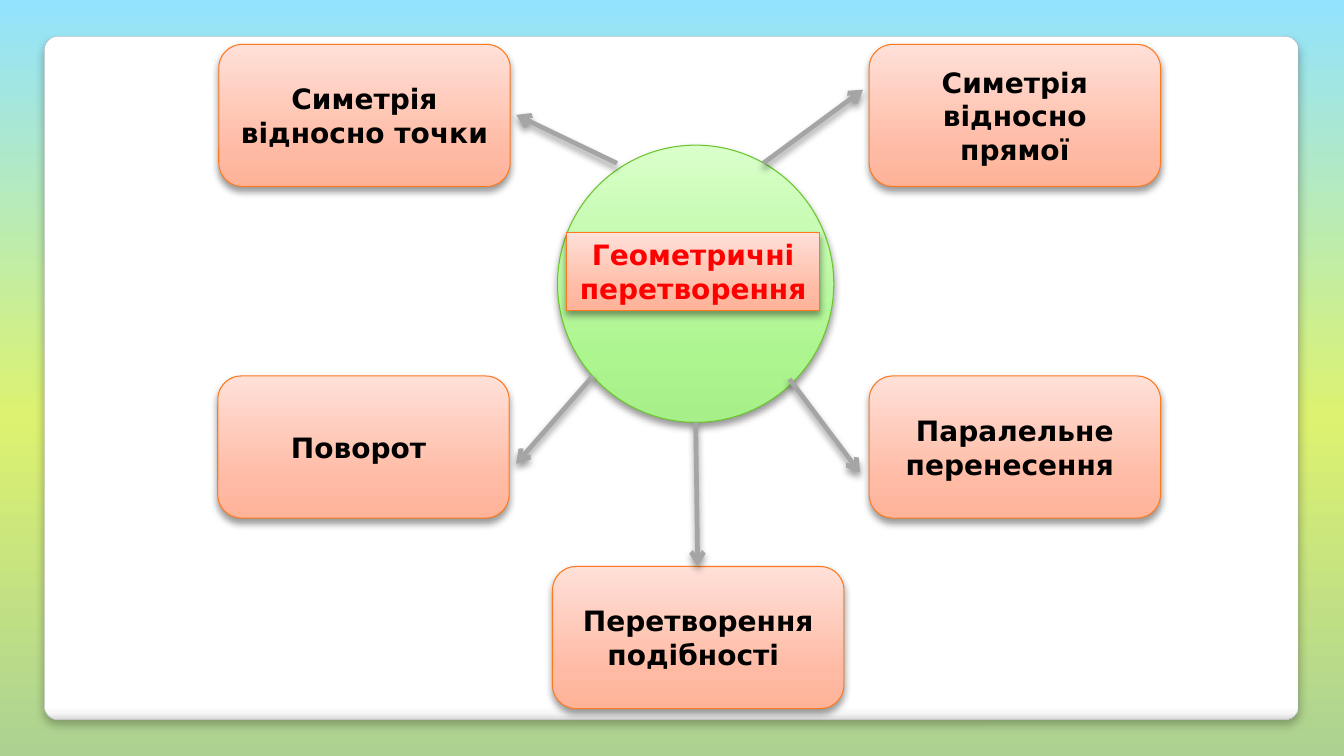
from dataclasses import dataclass

from lxml.etree import SubElement
from pptx import Presentation
from pptx.dml.color import RGBColor
from pptx.enum.shapes import MSO_CONNECTOR as Connector, MSO_SHAPE as Shape
from pptx.enum.text import MSO_ANCHOR as Anchor, MSO_AUTO_SIZE as AutoSize, PP_ALIGN as Align
from pptx.oxml.ns import qn
from pptx.util import Inches, Pt


@dataclass(frozen=True)
class Theme:
    font: str = "DejaVu Sans"
    text_size: float = 20
    text: str = "000000"
    title: str = "FF0000"
    sky: tuple = ((0, "ACD292"), (45, "DCF270"), (100, "93E3FF"))
    panel: tuple = ((0, "FFFFFF"), (98, "FFFFFF"), (99, "F7F7F7"), (100, "DADADA"))
    peach: tuple = ((0, "FFB399"), (25, "FFBAA3"), (100, "FFE0D8"))
    green: tuple = ((0, "A7EF88"), (25, "ADF58F"), (100, "D9FFCA"))
    panel_line: str = "A4A4A4"
    peach_line: str = "FF7A1F"
    green_line: str = "6BC62E"
    arrow: str = "A5A5A5"
    shadow: str = "000000"
    outline: float = 0.75
    panel_outline: float = 0.16
    arrow_width: float = 3.35


THEME = Theme()

BLOCK_SIZE = (2.89, 1.41)
BLOCKS = (
    (2.17, 0.44, "Симетрія відносно точки"),
    (8.62, 0.44, "Симетрія відносно прямої"),
    (2.16, 3.73, "Поворот "),
    (8.62, 3.73, "Паралельне перенесення "),
    (5.48, 5.62, "Перетворення подібності "),
)
ARROWS = (
    (6.12, 1.62, 5.12, 1.14),
    (7.57, 1.62, 8.56, 0.89),
    (5.88, 3.73, 5.12, 4.6),
    (7.83, 3.76, 8.53, 4.69),
    (6.9, 4.19, 6.92, 5.62),
)


def paint_gradient(fill, owner, stops, upward=True):
    """Fill with any number of stops, running straight up or straight down."""
    fill.gradient()
    fill.gradient_angle = 90 if upward else 270
    stop_list = next(owner.iter(qn("a:gsLst")))
    for old_stop in list(stop_list):
        stop_list.remove(old_stop)
    for percent, color in stops:
        stop = SubElement(stop_list, qn("a:gs"), pos=str(percent * 1000))
        SubElement(stop, qn("a:srgbClr"), val=color)


def cast_shadow(properties, opacity=40, blur=5.2, distance=3):
    """Put a downward shadow into an effect list placed after the line."""
    effects = properties.find(qn("a:effectLst"))
    if effects is None:
        effects = SubElement(properties, qn("a:effectLst"))
    shadow = SubElement(effects, qn("a:outerShdw"), blurRad=str(Pt(blur)),
                        dist=str(Pt(distance)), dir="5400000", rotWithShape="0")
    color = SubElement(shadow, qn("a:srgbClr"), val=THEME.shadow)
    SubElement(color, qn("a:alpha"), val=str(opacity * 1000))


def set_line(line, color, width):
    line.color.rgb = RGBColor.from_string(color)
    line.width = Pt(width)


def add_figure(page, kind, place, stops, line_color, width=THEME.outline, upward=True):
    figure = page.shapes.add_shape(kind, *map(Inches, place))
    paint_gradient(figure.fill, figure.element, stops, upward)
    set_line(figure.line, line_color, width)
    figure.shadow.inherit = False
    return figure


def add_panel(page):
    panel = add_figure(page, Shape.ROUNDED_RECTANGLE, (0.44, 0.36, 12.44, 6.78),
                       THEME.panel, THEME.panel_line, THEME.panel_outline, upward=False)
    panel.adjustments[0] = 0.02
    cast_shadow(panel.element.spPr, opacity=25, blur=6, distance=4)


def add_label(page, kind, place, text, color, anchor=Anchor.MIDDLE):
    box = add_figure(page, kind, place, THEME.peach, THEME.peach_line)
    cast_shadow(box.element.spPr)
    frame = box.text_frame
    frame.word_wrap = True
    frame.vertical_anchor = anchor
    para = frame.paragraphs[0]
    para.alignment = Align.CENTER
    span = para.add_run()
    span.text = text
    span.font.name = THEME.font
    span.font.size = Pt(THEME.text_size)
    span.font.bold = True
    span.font.color.rgb = RGBColor.from_string(color)
    return box


def add_arrow(page, ends):
    arrow = page.shapes.add_connector(Connector.STRAIGHT, *map(Inches, ends))
    set_line(arrow.line, THEME.arrow, THEME.arrow_width)
    properties = arrow.element.spPr
    SubElement(properties.find(qn("a:ln")), qn("a:tailEnd"), type="arrow")
    cast_shadow(properties)


def main():
    deck = Presentation()
    deck.slide_width, deck.slide_height = Inches(13.33), Inches(7.5)
    page = deck.slides.add_slide(deck.slide_layouts[6])
    paint_gradient(page.background.fill, page.element, THEME.sky)

    add_panel(page)
    for left, top, text in BLOCKS:
        add_label(page, Shape.ROUNDED_RECTANGLE, (left, top, *BLOCK_SIZE), text, THEME.text)

    circle = add_figure(page, Shape.OVAL, (5.53, 1.44, 2.74, 2.75),
                        THEME.green, THEME.green_line)
    cast_shadow(circle.element.spPr)
    for ends in ARROWS:
        add_arrow(page, ends)
    title = add_label(page, Shape.RECTANGLE, (5.62, 2.31, 2.51, 0.77),
                      "Геометричні перетворення", THEME.title, Anchor.TOP)
    title.text_frame.auto_size = AutoSize.SHAPE_TO_FIT_TEXT

    deck.save("out.pptx")


if __name__ == "__main__":
    main()
